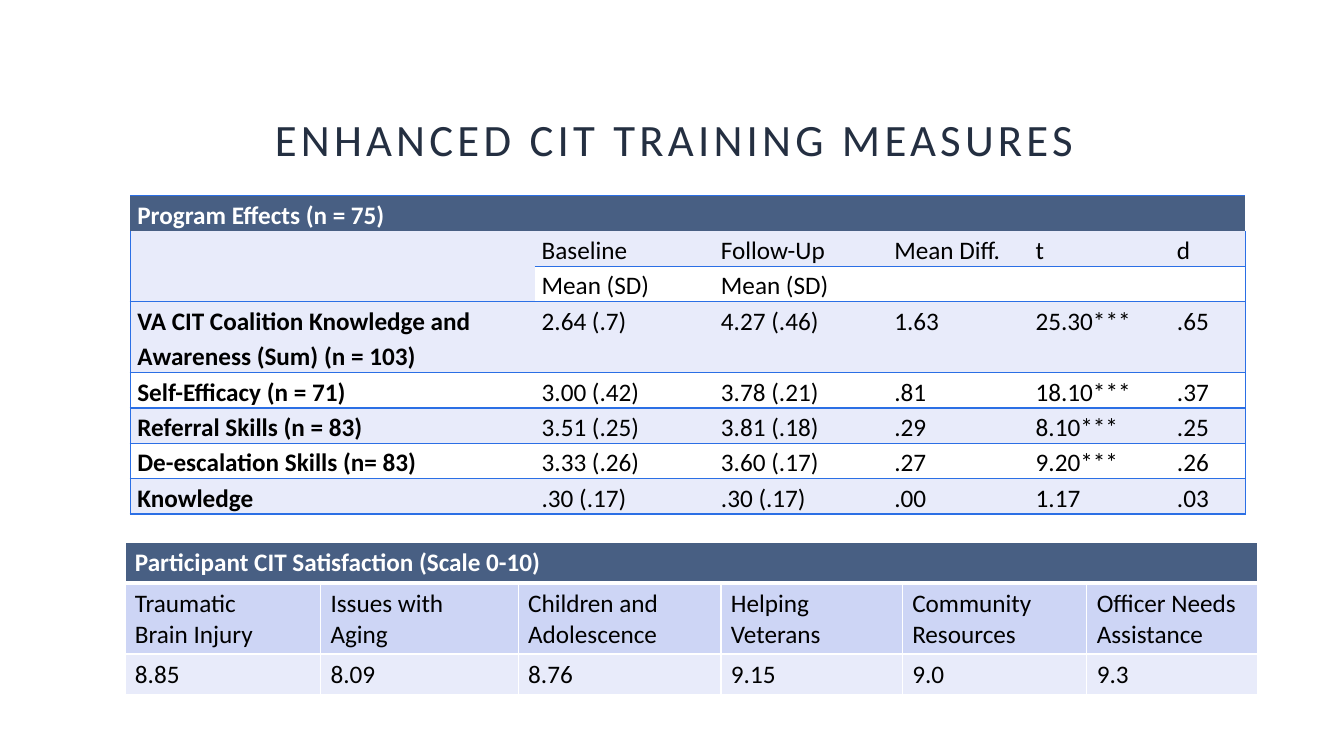
"""Build the slide of training measures with its two tables."""
from dataclasses import dataclass
from typing import Optional

import lxml.etree
import pptx
import pptx.dml.color
import pptx.enum.text
import pptx.oxml.ns
import pptx.table
import pptx.util

Cm = pptx.util.Cm
FONT = "Calibri"
NAVY, BLUE, WHITE, BLACK = "485F83", "2B6FE5", "FFFFFF", "000000"
PALE, MID = "E8EBFA", "CDD5F5"


@dataclass
class Grid:
    left: float
    top: float
    widths: list[float]
    heights: list[float]
    rows: list[list[str]]
    bands: tuple[str, str]
    lead: float
    pad: tuple[float, float]
    boxed: bool


EFFECTS = Grid(
    3.28, 4.93,
    [10.19, 4.52, 4.37, 3.56, 3.56, 1.9],
    [0.89] * 3 + [1.79] + [0.89] * 4,
    [
        ["Program Effects (n = 75)"],
        ["", "Baseline", "Follow-Up", "Mean Diff.", "t", "d"],
        ["", "Mean (SD)", "Mean (SD)", "", "", ""],
        ["VA CIT Coalition Knowledge and Awareness (Sum) (n = 103)",
         "2.64 (.7)", "4.27 (.46)", "1.63", "25.30***", ".65"],
        ["Self-Efficacy (n = 71)", "3.00 (.42)", "3.78 (.21)", ".81", "18.10***", ".37"],
        ["Referral Skills (n = 83)", "3.51 (.25)", "3.81 (.18)", ".29", "8.10***", ".25"],
        ["De-escalation Skills (n= 83)", "3.33 (.26)", "3.60 (.17)", ".27", "9.20***", ".26"],
        ["Knowledge", ".30 (.17)", ".30 (.17)", ".00", "1.17", ".03"],
    ],
    (PALE, WHITE), 1.15, (0.18, 0), True,
)

RATINGS = Grid(
    3.15, 13.67,
    [4.93, 4.98, 5.11, 4.57, 4.65, 4.29],
    [1.02, 1.78, 1.02],
    [
        ["Participant CIT Satisfaction (Scale 0-10)"],
        ["Traumatic\nBrain Injury", "Issues with\nAging", "Children and\nAdolescence",
         "Helping\nVeterans", "Community\nResources", "Officer Needs\vAssistance"],
        ["8.85", "8.09", "8.76", "9.15", "9.0", "9.3"],
    ],
    (MID, PALE), 1.0, (0.25, 0.13), False,
)


def tint(code: str) -> pptx.dml.color.RGBColor:
    return pptx.dml.color.RGBColor.from_string(code)


def style(frame, size: float, code: str, bold: bool, lead: float) -> None:
    for para in frame.paragraphs:
        para.line_spacing = lead
        for run in para.runs:
            run.font.name = FONT
            run.font.size = pptx.util.Pt(size)
            run.font.bold = bold
            run.font.color.rgb = tint(code)


def edge(cell: pptx.table._Cell, side: str, code: Optional[str], width: float) -> None:
    name = pptx.oxml.ns.qn
    props = cell._tc.get_or_add_tcPr()
    line = lxml.etree.SubElement(props, name(f"a:ln{side}"), w=str(pptx.util.Pt(width)))
    if code is None:
        lxml.etree.SubElement(line, name("a:noFill"))
    else:
        fill = lxml.etree.SubElement(line, name("a:solidFill"))
        lxml.etree.SubElement(fill, name("a:srgbClr"), val=code)


def border(cell: pptx.table._Cell, grid: Grid, row: int, col: int) -> None:
    last = len(grid.widths) - 1
    shown = {
        "L": row > 0 and col == 0,
        "R": row > 0 and col == last,
        "T": row != 1,
        "B": row > 0,
    }
    for side, seen in shown.items():
        if grid.boxed:
            edge(cell, side, BLUE if seen else None, 1)
        else:
            thick = (row, side) in ((0, "B"), (1, "T"))
            edge(cell, side, WHITE, 3 if thick else 1)


def draw(slide, grid: Grid) -> None:
    frame = slide.shapes.add_table(
        len(grid.heights), len(grid.widths), Cm(grid.left), Cm(grid.top),
        Cm(sum(grid.widths)), Cm(sum(grid.heights)))
    table = frame.table
    table.horz_banding = False
    for column, width in zip(table.columns, grid.widths):
        column.width = Cm(width)
    for line, height in zip(table.rows, grid.heights):
        line.height = Cm(height)
    table.cell(0, 0).merge(table.cell(0, len(grid.widths) - 1))
    if grid.boxed:
        table.cell(1, 0).merge(table.cell(2, 0))
    for row, texts in enumerate(grid.rows):
        for col in range(len(grid.widths)):
            cell = table.cell(row, col)
            border(cell, grid, row, col)
            cell.fill.solid()
            cell.fill.fore_color.rgb = tint(grid.bands[(row - 1) % 2] if row else NAVY)
            cell.margin_left = cell.margin_right = Cm(grid.pad[0])
            cell.margin_top = cell.margin_bottom = Cm(grid.pad[1])
            if col < len(texts):
                cell.text_frame.text = texts[col]
            bold = row == 0 or (grid.boxed and col == 0)
            style(cell.text_frame, 18, BLACK if row else WHITE, bold, grid.lead)


def head(slide, text: str) -> None:
    frame = slide.shapes.add_textbox(Cm(3.81), Cm(1.9), Cm(26.37), Cm(2.41)).text_frame
    frame.word_wrap = True
    frame.vertical_anchor = pptx.enum.text.MSO_ANCHOR.BOTTOM
    frame.text = text
    style(frame, 32, "242F41", False, 0.9)
    para = frame.paragraphs[0]
    para.alignment = pptx.enum.text.PP_ALIGN.CENTER
    para.runs[0].font._element.set("spc", "300")


def main() -> None:
    deck = pptx.Presentation()
    deck.slide_width, deck.slide_height = Cm(33.87), Cm(19.05)
    slide = deck.slides.add_slide(deck.slide_layouts[6])
    head(slide, "ENHANCED CIT TRAINING MEASURES")
    for grid in (EFFECTS, RATINGS):
        draw(slide, grid)
    deck.save("out.pptx")


if __name__ == "__main__":
    main()
